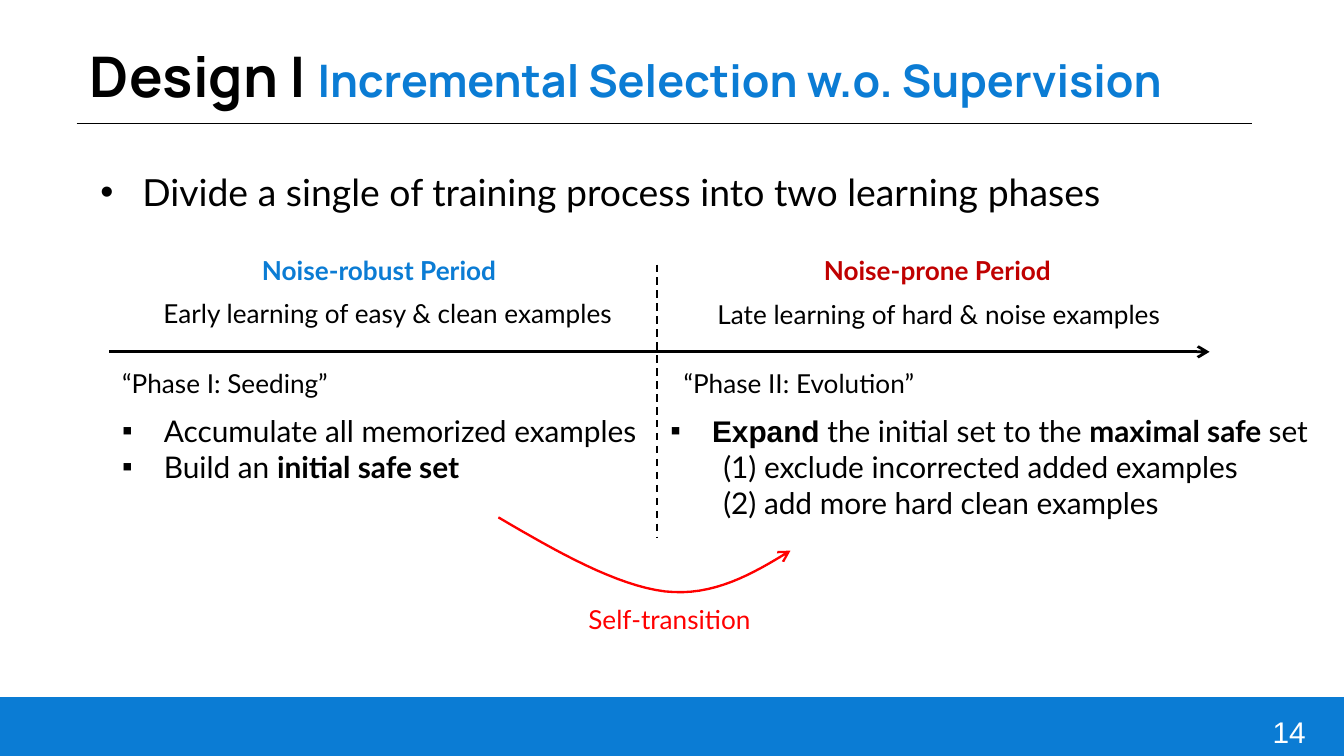
"""Build a slide on incremental selection in two learning phases."""
from pptx import Presentation
from pptx.dml.color import RGBColor
from pptx.enum.dml import MSO_LINE
from pptx.enum.shapes import MSO_CONNECTOR, MSO_SHAPE
from pptx.enum.text import MSO_ANCHOR as Anchor, MSO_AUTO_SIZE as AutoSize, PP_ALIGN as Align
from pptx.oxml.ns import qn
from pptx.util import Cm, Pt
from lxml.etree import SubElement

BLACK = RGBColor(0x00, 0x00, 0x00)
WHITE = RGBColor(0xFF, 0xFF, 0xFF)
BLUE = RGBColor(0x0B, 0x7C, 0xD4)
DARK_RED = RGBColor(0xC0, 0x00, 0x00)
RED = RGBColor(0xFF, 0x00, 0x00)


def add_run(paragraph, text, size=16, font="Lato", color=BLACK, bold=False):
    run = paragraph.add_run()
    run.text = text
    run.font.size, run.font.name, run.font.bold = Pt(size), font, bold
    run.font.color.rgb = color


def bezier(start, first, second, end, steps=16):
    for step in range(1, steps + 1):
        t = step / steps
        weights = ((1 - t) ** 3, 3 * t * (1 - t) ** 2, 3 * t * t * (1 - t), t ** 3)
        yield tuple(
            Cm(sum(weight * value for weight, value in zip(weights, axis)))
            for axis in zip(start, first, second, end)
        )


class PhaseSlide:
    def __init__(self, deck):
        self.slide = deck.slides.add_slide(deck.slide_layouts[6])
        self.shapes = self.slide.shapes

    def text(self, left, top, width, height, lines, inset=(0.25, 0.13),
             grow=False, anchor=Anchor.TOP, align=Align.LEFT):
        box = self.shapes.add_textbox(Cm(left), Cm(top), Cm(width), Cm(height))
        frame = box.text_frame
        frame.word_wrap, frame.vertical_anchor = not grow, anchor
        frame.auto_size = AutoSize.SHAPE_TO_FIT_TEXT if grow else AutoSize.NONE
        frame.margin_left = frame.margin_right = Cm(inset[0])
        frame.margin_top = frame.margin_bottom = Cm(inset[1])
        for index, runs in enumerate(lines):
            paragraph = frame.add_paragraph() if index else frame.paragraphs[0]
            paragraph.alignment = align
            for words, style in runs:
                add_run(paragraph, words, **style)
        return frame.paragraphs

    def label(self, left, top, width, words, **style):
        self.text(left, top, width, 0.86, [[(words, {"size": 14, **style})]], grow=True)

    def bullets(self, left, top, width, height, lines, mark="▪", plain_from=None):
        paragraphs = self.text(left, top, width, height, lines)
        for paragraph in paragraphs[:plain_from]:
            properties = paragraph._p.get_or_add_pPr()
            properties.set("marL", str(Cm(0.79)))
            properties.set("indent", str(Cm(-0.79)))
            SubElement(SubElement(properties, qn("a:buClr")), qn("a:srgbClr"), val=str(BLACK))
            SubElement(properties, qn("a:buFont"), typeface="Arial")
            SubElement(properties, qn("a:buChar"), char=mark)
        for paragraph in paragraphs[len(paragraphs) if plain_from is None else plain_from:]:
            paragraph._p.get_or_add_pPr().set("marL", str(Cm(1)))

    def bar(self, left, top, width, height, color):
        band = self.shapes.add_shape(
            MSO_SHAPE.RECTANGLE, Cm(left), Cm(top), Cm(width), Cm(height))
        band.shadow.inherit = False
        band.fill.solid()
        band.fill.fore_color.rgb = color
        band.line.fill.background()

    def stroke(self, shape, color, weight, arrow=False, dash=None):
        shape.line.color.rgb = color
        shape.line.width = Pt(weight)
        if dash:
            shape.line.dash_style = dash
        if arrow:
            SubElement(shape.line._get_or_add_ln(), qn("a:tailEnd"), type="arrow")

    def line(self, x1, y1, x2, y2, weight, **style):
        connector = self.shapes.add_connector(
            MSO_CONNECTOR.STRAIGHT, Cm(x1), Cm(y1), Cm(x2), Cm(y2))
        self.stroke(connector, BLACK, weight, **style)
        SubElement(connector._element.spPr, qn("a:effectLst"))

    def curve(self, points, color, weight):
        builder = self.shapes.build_freeform(Cm(points[0][0]), Cm(points[0][1]))
        for start in range(0, len(points) - 1, 3):
            builder.add_line_segments(bezier(*points[start:start + 4]), close=False)
        arc = builder.convert_to_shape()
        arc.shadow.inherit = False
        arc.fill.background()
        self.stroke(arc, color, weight, arrow=True)


def main():
    deck = Presentation()
    deck.slide_width, deck.slide_height = Cm(25.4), Cm(14.29)
    page = PhaseSlide(deck)
    bold = {"bold": True}
    heading = {"font": "Manrope", "bold": True}

    page.text(1.45, 0.53, 23.09, 1.78, [[
        ("Design | ", {"size": 30, **heading}),
        ("Incremental Selection w.o. Supervision", {"size": 24, "color": BLUE, **heading}),
    ]], inset=(0.25, 0.25), anchor=Anchor.MIDDLE)
    page.bar(0, 13.18, 25.4, 1.11, BLUE)
    page.line(1.45, 2.34, 23.67, 2.34, 0.75)
    page.text(23.83, 13.49, 1.07, 0.51, [[("14", {"font": "Arial", "color": WHITE})]],
              inset=(0, 0), align=Align.CENTER)

    page.bullets(1.65, 3.07, 23.42, 10.26, [[
        ("Divide a single of training process into two learning phases", {"size": 20}),
    ]], mark="•")
    page.line(2.06, 6.65, 22.86, 6.65, 1.5, arrow=True)
    page.line(12.42, 5, 12.42, 10.16, 1, dash=MSO_LINE.DASH)

    page.label(4.7, 4.67, 5.03, "Noise-robust Period", color=BLUE, bold=True)
    page.label(2.84, 5.49, 9.02, "Early learning of easy & clean examples")
    page.label(2.06, 6.81, 4.45, "“Phase I: Seeding”")
    page.bullets(2.06, 7.67, 10.82, 1.75, [
        [("Accumulate all memorized examples", {})],
        [("Build an ", {}), ("initial safe set", bold)],
    ])

    page.label(15.32, 4.67, 4.88, "Noise-prone Period", color=DARK_RED, bold=True)
    page.label(13.31, 5.51, 8.92, "Late learning of hard & noise examples")
    page.label(12.67, 6.81, 4.93, "“Phase II: Evolution”")
    page.bullets(12.42, 7.67, 12.65, 3.25, [
        [("Expand", {"font": "Arial", **bold}), (" the initial set to the ", {}),
         ("maximal safe ", bold), ("set", {})],
        [("(1) exclude incorrected added examples", {})],
        [("(2) add more hard clean examples", {})],
    ], plain_from=1)

    page.curve([(9.42, 9.78), (10.54, 10.44), (11.66, 11.07), (12.57, 11.18),
                (13.49, 11.28), (14.22, 10.85), (14.94, 10.41)], RED, 1.25)
    page.label(10.87, 11.28, 3.63, "Self-transition", color=RED)
    deck.save("out.pptx")


if __name__ == "__main__":
    main()
